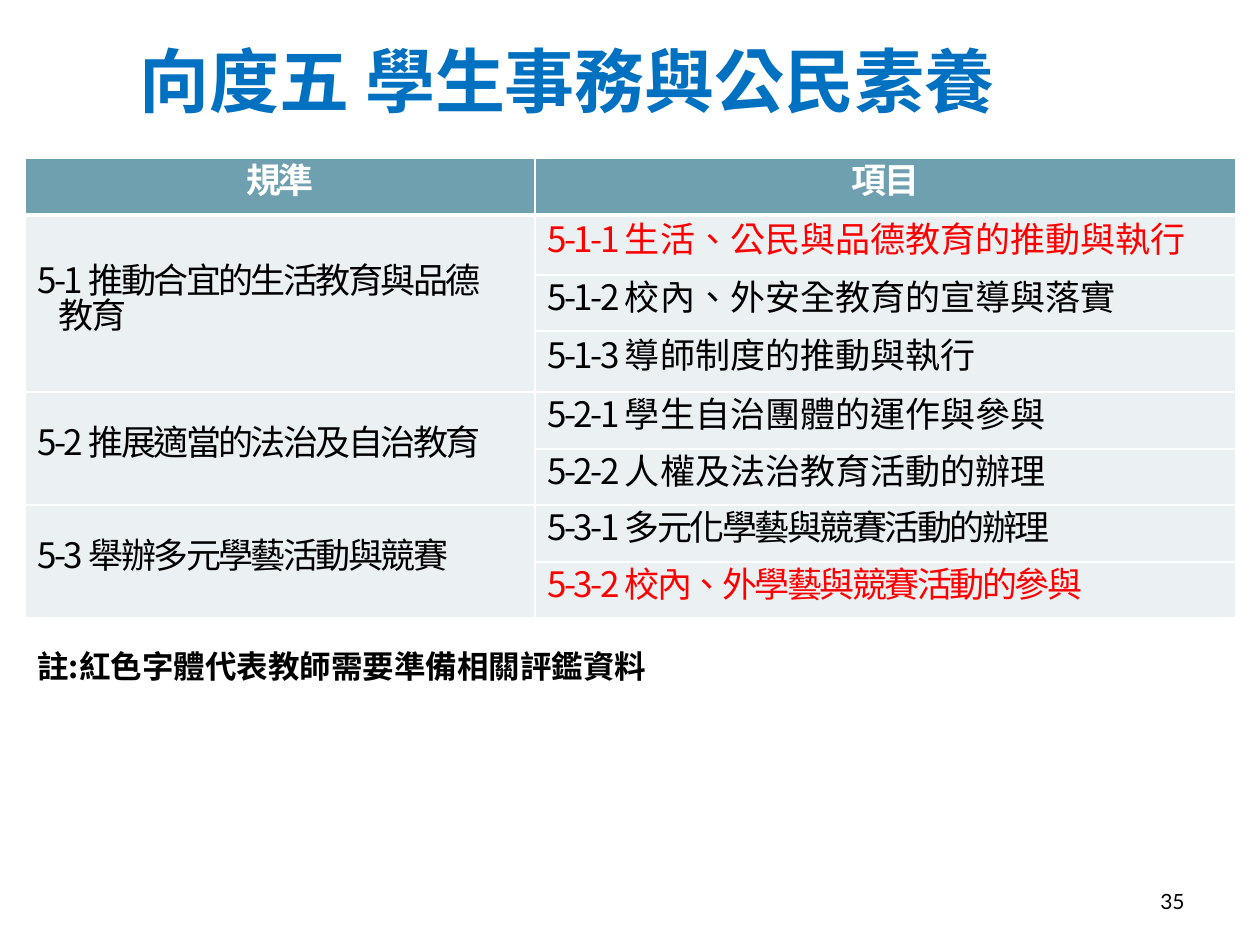
from dataclasses import dataclass

from lxml import etree
from pptx import Presentation
from pptx.dml.color import RGBColor
from pptx.enum.text import MSO_ANCHOR, PP_ALIGN
from pptx.oxml.ns import qn
from pptx.slide import Slide
from pptx.table import Table, _Cell
from pptx.text.text import TextFrame, _Paragraph
from pptx.util import Emu, Pt

LEFT, CENTER, RIGHT, JUSTIFY = PP_ALIGN.LEFT, PP_ALIGN.CENTER, PP_ALIGN.RIGHT, PP_ALIGN.JUSTIFY
TOP, MIDDLE = MSO_ANCHOR.TOP, MSO_ANCHOR.MIDDLE

EMU_PER_PX = 914400 / 126
COLORS = {
    "title": "0070C0",
    "header": "6EA0B0",
    "body": "EBF0F2",
    "white": "FFFFFF",
    "black": "000000",
    "red": "FF0000",
}
SERIF, CJK, LATO = "Times New Roman", "Noto Sans CJK SC", "Lato"
TIGHT = -150
COLUMN_WIDTHS = [510, 701]
ROW_HEIGHTS = [57, 60, 56, 61, 57, 56, 57, 56]


@dataclass(frozen=True)
class Item:
    """One evaluation item; `tight` narrows the wording as well as the number."""

    number: str
    wording: str
    color: str = "black"
    tight: bool = False


@dataclass(frozen=True)
class Criterion:
    """One criterion, its lines of text and the items under it."""

    lines: list[str]
    items: list[Item]


@dataclass(frozen=True)
class Caption:
    """A single line of text standing outside the table."""

    text: str
    box: tuple[int, int, int, int]
    size: int
    font: str
    color: str = "black"
    bold: bool = False
    align: PP_ALIGN = LEFT
    anchor: MSO_ANCHOR = MIDDLE


CRITERIA = [
    Criterion(["5-1 推動合宜的生活教育與品德", "教育"], [
        Item("5-1-1", "生活、公民與品德教育的推動與執行", "red"),
        Item("5-1-2", "校內、外安全教育的宣導與落實"),
        Item("5-1-3", "導師制度的推動與執行"),
    ]),
    Criterion(["5-2 推展適當的法治及自治教育"], [
        Item("5-2-1", "學生自治團體的運作與參與"),
        Item("5-2-2", "人權及法治教育活動的辦理"),
    ]),
    Criterion(["5-3 舉辦多元學藝活動與競賽"], [
        Item("5-3-1", "多元化學藝與競賽活動的辦理", tight=True),
        Item("5-3-2", "校內、外學藝與競賽活動的參與", "red", tight=True),
    ]),
]
CAPTIONS = [
    Caption("向度五 學生事務與公民素養", (0, 0, 1134, 158), 40, SERIF, "title", True, CENTER),
    Caption("註:紅色字體代表教師需要準備相關評鑑資料", (25, 641, 1131, 50), 18, CJK,
            bold=True, anchor=TOP),
    Caption("35", (903, 876, 294, 50), 12, LATO, align=RIGHT),
]


def px(length: int) -> Emu:
    """Turn pixels into EMU."""
    return Emu(round(length * EMU_PER_PX))


def write(paragraph: _Paragraph, text: str, *, size: int = 20, font: str = CJK,
          color: str = "black", bold: bool = False, spacing: int = 0) -> None:
    """Add a formatted run to a paragraph."""
    run = paragraph.add_run()
    run.text = text
    run.font.size = Pt(size)
    run.font.bold = bold
    run.font.color.rgb = RGBColor.from_string(COLORS[color])
    run.font.name = font
    properties = run.font._element
    properties.set("lang", "zh-TW")
    properties.set("spc", str(spacing))
    etree.SubElement(properties, qn("a:ea")).set("typeface", CJK)


def table_line(frame: TextFrame, position: int, align: PP_ALIGN) -> _Paragraph:
    """Return the paragraph at a position, set to the table's line spacing."""
    paragraph = frame.add_paragraph() if position else frame.paragraphs[0]
    paragraph.alignment = align
    paragraph.line_spacing = Pt(20)
    return paragraph


def style_cell(cell: _Cell, row: int) -> None:
    """Give a cell its white borders, fill and anchor."""
    widths = {"L": 1, "R": 1, "T": 3 if row == 1 else 1, "B": 3 if row == 0 else 1}
    properties = cell._tc.get_or_add_tcPr()
    for side, width in widths.items():
        border = etree.SubElement(properties, qn(f"a:ln{side}"), w=str(Pt(width)))
        fill = etree.SubElement(border, qn("a:solidFill"))
        etree.SubElement(fill, qn("a:srgbClr"), val=COLORS["white"])
    cell.fill.solid()
    cell.fill.fore_color.rgb = RGBColor.from_string(COLORS["body" if row else "header"])
    cell.vertical_anchor = MIDDLE


def fill_criterion(table: Table, row: int, criterion: Criterion) -> None:
    """Write a criterion across its rows, with one item in each."""
    heading = table.cell(row, 0)
    heading.merge(table.cell(row + len(criterion.items) - 1, 0))
    for position, text in enumerate(criterion.lines):
        paragraph = table_line(heading.text_frame, position, JUSTIFY)
        if position:
            paragraph._p.get_or_add_pPr().set("marL", str(px(21)))
        write(paragraph, text, spacing=TIGHT)
    for offset, item in enumerate(criterion.items):
        paragraph = table_line(table.cell(row + offset, 1).text_frame, 0, JUSTIFY)
        write(paragraph, f"{item.number} ", color=item.color, spacing=TIGHT)
        write(paragraph, item.wording, color=item.color, spacing=TIGHT if item.tight else 0)


def draw_table(slide: Slide) -> None:
    """Draw the table of criteria and items."""
    table = slide.shapes.add_table(
        len(ROW_HEIGHTS), len(COLUMN_WIDTHS), px(25), px(158),
        px(sum(COLUMN_WIDTHS)), px(sum(ROW_HEIGHTS))).table
    for column, width in zip(table.columns, COLUMN_WIDTHS):
        column.width = px(width)
    for index, (row, height) in enumerate(zip(table.rows, ROW_HEIGHTS)):
        row.height = px(height)
        for cell in row.cells:
            style_cell(cell, index)
    for column, label in enumerate(["規準", "項目"]):
        paragraph = table_line(table.cell(0, column).text_frame, 0, CENTER)
        write(paragraph, label, font=SERIF, color="white", bold=True, spacing=TIGHT)
    first_row = 1
    for criterion in CRITERIA:
        fill_criterion(table, first_row, criterion)
        first_row += len(criterion.items)


def draw_caption(slide: Slide, caption: Caption) -> None:
    """Draw a caption in its own text box."""
    frame = slide.shapes.add_textbox(*map(px, caption.box)).text_frame
    frame.word_wrap = True
    frame.vertical_anchor = caption.anchor
    frame.paragraphs[0].alignment = caption.align
    write(frame.paragraphs[0], caption.text, size=caption.size, font=caption.font,
          color=caption.color, bold=caption.bold)


def main() -> None:
    """Build the slide and save it."""
    deck = Presentation()
    deck.slide_width, deck.slide_height = px(1260), px(945)
    slide = deck.slides.add_slide(deck.slide_layouts[6])
    draw_table(slide)
    for caption in CAPTIONS:
        draw_caption(slide, caption)
    deck.save("out.pptx")


if __name__ == "__main__":
    main()
